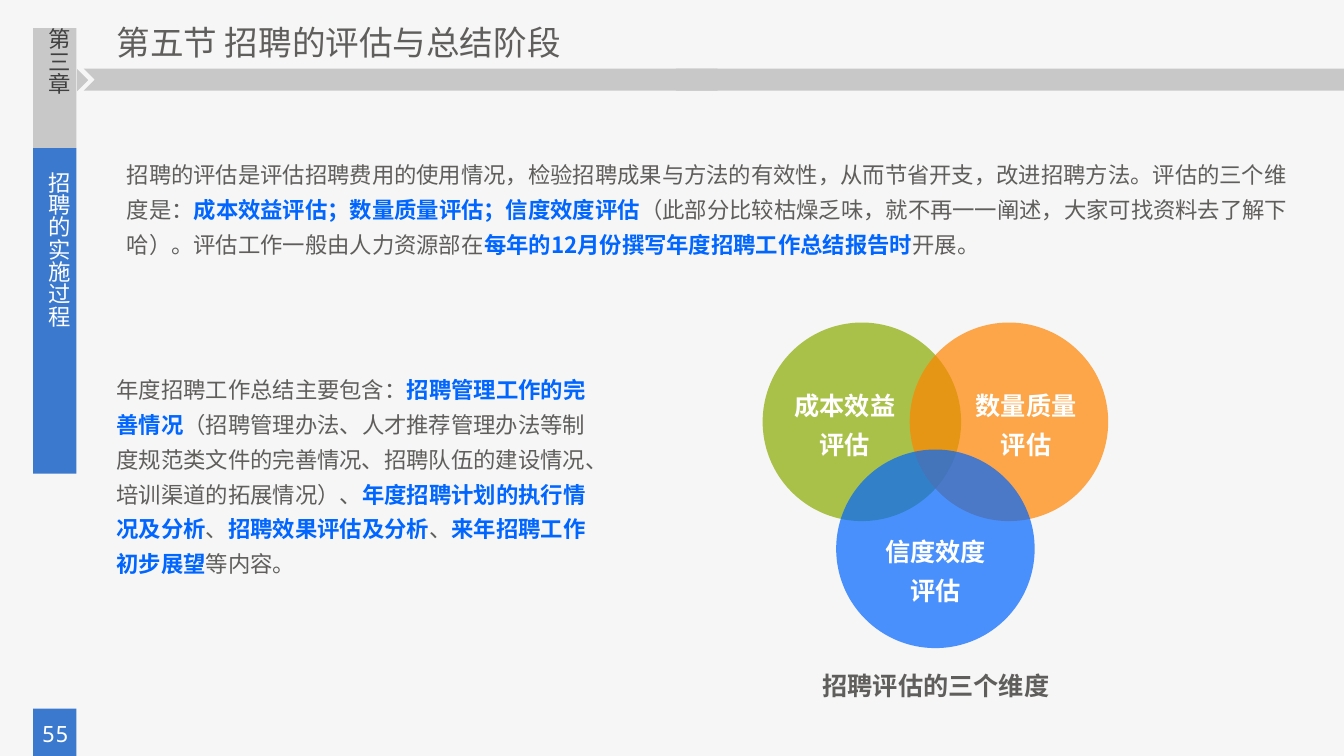
import pptx
import pptx.dml.color
import pptx.enum.shapes
import pptx.enum.text
import pptx.oxml
import pptx.oxml.ns
import pptx.util

PX = 9144  # 100 px to the inch
SANS, MONO = "Noto Sans CJK SC", "Noto Sans Mono"
PAPER, SILVER, NAVY = "F6F6F6", "C8C8C8", "3B79CE"
INK, DARK, WHITE, BLUE = "5F5E5C", "404040", "FFFFFF", "0066FF"
GREEN, ORANGE = "8BAB00", "FF8500"

KIND = pptx.enum.shapes.MSO_SHAPE
CENTER = pptx.enum.text.PP_ALIGN.CENTER
LEFT = pptx.enum.text.PP_ALIGN.LEFT
MIDDLE = pptx.enum.text.MSO_ANCHOR.MIDDLE
GROW = pptx.enum.text.MSO_AUTO_SIZE.SHAPE_TO_FIT_TEXT


def emu(box):
    return [n * PX for n in box]


def rgb(code):
    return pptx.dml.color.RGBColor.from_string(code)


def child(node, tag, **attrs):
    item = pptx.oxml.parse_xml(f"<a:{tag} {pptx.oxml.ns.nsdecls('a')}/>")
    for key, value in attrs.items():
        item.set(key, str(value))
    node.append(item)


def shape(shapes, kind, box, color, alpha=None):
    item = shapes.add_shape(kind, *emu(box))
    item.shadow.inherit = False
    item.fill.solid()
    item.fill.fore_color.rgb = rgb(color)
    item.line.fill.background()
    if alpha:
        tone = item.fill._xPr.find(".//" + pptx.oxml.ns.qn("a:srgbClr"))
        child(tone, "alpha", val=alpha * 1000)
    return item


def text(shapes, box, runs, size=16, font=SANS, align=LEFT, lead=1.0):
    """Add a text box; runs are (words, color, bold)."""
    item = shapes.add_textbox(*emu(box))
    frame = item.text_frame
    frame.word_wrap = True
    frame.auto_size = GROW
    para = frame.paragraphs[0]
    para.alignment, para.line_spacing = align, lead
    for words, color, bold in runs:
        run = para.add_run()
        run.text = words
        look = {"size": pptx.util.Pt(size), "name": font, "bold": bold}
        for key, value in look.items():
            setattr(run.font, key, value)
        run.font.color.rgb = rgb(color)
        child(run.font._element, "ea", typeface=font)
    return frame


def column(shapes, box, words, color, align=LEFT):
    """Add text that reads from top to bottom."""
    frame = text(shapes, box, [(words, color, False)], align=align)
    frame.vertical_anchor = MIDDLE
    for side in ("left", "right", "top", "bottom"):
        setattr(frame, "margin_" + side, 0)
    frame._txBody.bodyPr.set("vert", "eaVert")


def header(shapes, box, title):
    x, y, w, h = box
    shape(shapes, KIND.CHEVRON, (x, y, 640, h), SILVER)
    shape(shapes, KIND.RECTANGLE, (x + 588, y, w - 588, h), SILVER)
    text(shapes, (x + 23, y - 51, 544, 50), [(title, INK, False)], 24)


def sidebar(shapes, box, part, topic, page):
    x, y, w, h = box
    foot = y + h - 47
    shape(shapes, KIND.RECTANGLE, (x, y, w, 119), SILVER)
    tip = shape(shapes, KIND.ISOSCELES_TRIANGLE, (x + 38, y + 46, 22, 11), SILVER)
    tip.rotation = 90
    shape(shapes, KIND.RECTANGLE, (x, y + 119, w, 323), NAVY)
    shape(shapes, KIND.RECTANGLE, (x, foot, w, 47), NAVY)
    column(shapes, (x + 12, y, 27, 119), part, DARK, CENTER)
    column(shapes, (x + 12, y + 142, 27, 276), topic, WHITE)
    text(shapes, (x - 5, foot + 7, 54, 37), [(page, WHITE, False)],
         font=MONO, align=CENTER)


def prose(shapes, box, parts):
    """Set parts in turn as plain and as bold blue words."""
    runs = [(words, BLUE if i % 2 else INK, bool(i % 2))
            for i, words in enumerate(parts)]
    text(shapes, box, runs, lead=1.3)


def venn(shapes, box, names, title):
    x, y, w, h = box
    size = 197
    gap = w - size
    spots = [(0, 0, 17, 53), (gap, 0, 51, 53), (gap // 2, 126, 34, 72)]
    for name, color, (dx, dy, tx, ty) in zip(names, (GREEN, ORANGE, BLUE), spots):
        group = shapes.add_group_shape().shapes
        left, top = x + dx, y + dy
        shape(group, KIND.OVAL, (left, top, size, size), color, 70)
        text(group, (left + tx, top + ty, 129, 85), [(name, WHITE, True)],
             18, align=CENTER, lead=1.3)
    text(shapes, (x + 14, y + h - 46, 316, 46), [(title, INK, True)],
         18, align=CENTER, lead=1.3)


def main():
    deck = pptx.Presentation()
    deck.slide_width, deck.slide_height = emu((1334, 750))
    slide = deck.slides.add_slide(deck.slide_layouts[6])
    slide.background.fill.solid()
    slide.background.fill.fore_color.rgb = rgb(PAPER)
    shapes = slide.shapes

    header(shapes, (83, 68, 1251, 22), "第五节 招聘的评估与总结阶段")
    sidebar(shapes, (33, 28, 43, 722), "第三章", "招聘的实施过程", "55")
    prose(shapes, (116, 147, 1176, 115), [
        "招聘的评估是评估招聘费用的使用情况，检验招聘成果与方法的有效性，"
        "从而节省开支，改进招聘方法。评估的三个维度是：",
        "成本效益评估；数量质量评估；信度效度评估",
        "（此部分比较枯燥乏味，就不再一一阐述，大家可找资料去了解下哈）。"
        "评估工作一般由人力资源部在",
        "每年的12月份撰写年度招聘工作总结报告时",
        "开展。",
    ])
    prose(shapes, (106, 360, 506, 220), [
        "年度招聘工作总结主要包含：",
        "招聘管理工作的完善情况",
        "（招聘管理办法、人才推荐管理办法等制度规范类文件的完善情况、"
        "招聘队伍的建设情况、培训渠道的拓展情况）、",
        "年度招聘计划的执行情况及分析",
        "、",
        "招聘效果评估及分析",
        "、",
        "来年招聘工作初步展望",
        "等内容。",
    ])
    venn(shapes, (757, 320, 343, 377),
         ["成本效益评估", "数量质量评估", "信度效度评估"], "招聘评估的三个维度")
    deck.save("out.pptx")


if __name__ == "__main__":
    main()
